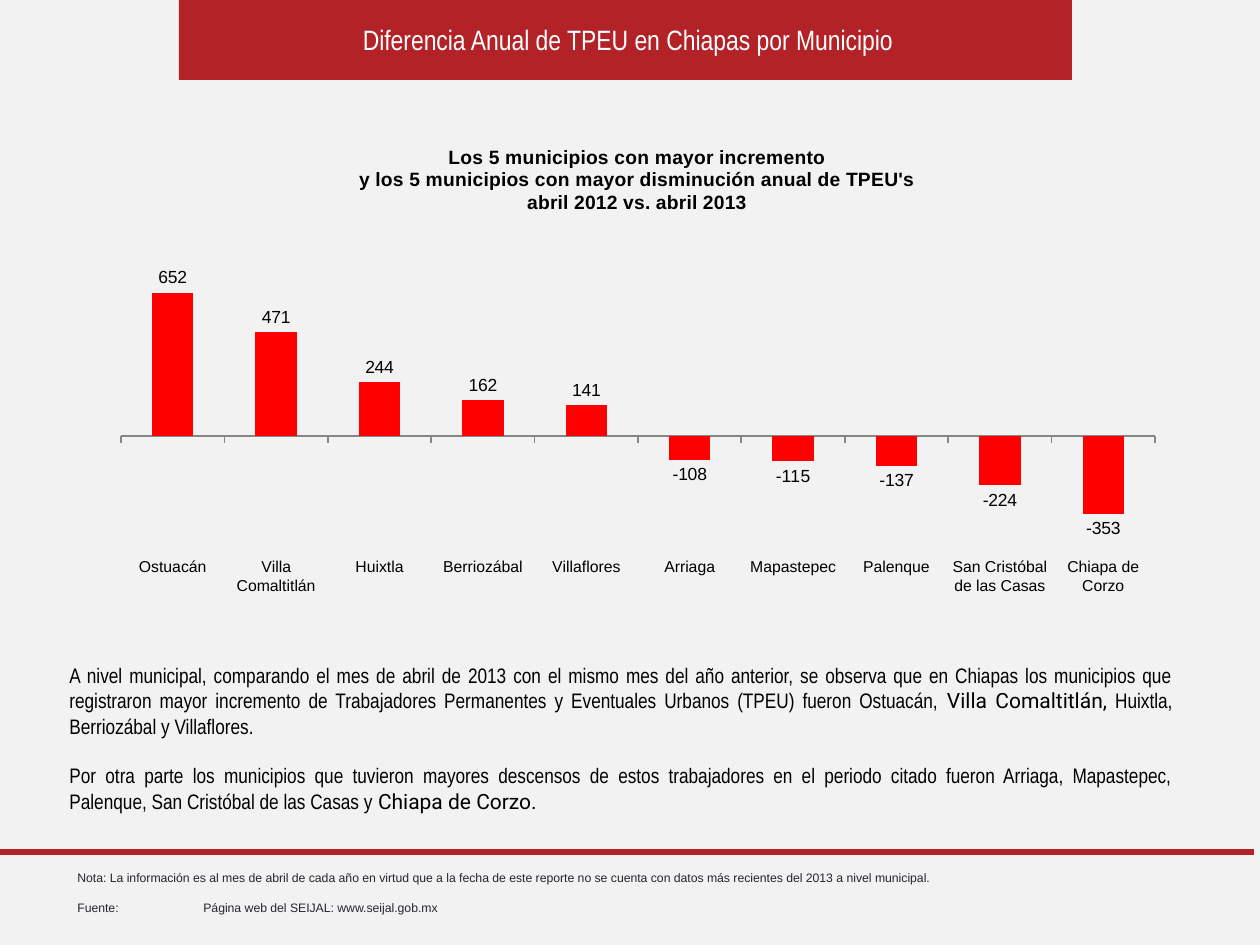
from lxml.etree import SubElement
from pptx import Presentation
from pptx.chart.data import CategoryChartData
from pptx.dml.color import RGBColor
from pptx.enum.chart import XL_CHART_TYPE, XL_LABEL_POSITION, XL_TICK_LABEL_POSITION, XL_TICK_MARK
from pptx.enum.shapes import MSO_SHAPE
from pptx.enum.text import MSO_ANCHOR, PP_ALIGN
from pptx.oxml.ns import qn
from pptx.util import Emu, Pt

PX_PER_INCH = 126
BACKGROUND = RGBColor(0xF2, 0xF2, 0xF2)
CRIMSON = RGBColor(0xB2, 0x22, 0x27)
RED = RGBColor(0xFF, 0x00, 0x00)
GRAY = RGBColor(0x86, 0x86, 0x86)
DARK = RGBColor(0x21, 0x27, 0x2E)
BLACK = RGBColor(0x00, 0x00, 0x00)
WHITE = RGBColor(0xFF, 0xFF, 0xFF)

TITLE = "Diferencia Anual de TPEU en Chiapas por Municipio"
CHART_TITLE = [
    "Los 5 municipios con mayor incremento",
    "y los 5 municipios con mayor disminución anual de TPEU's",
    "abril 2012 vs. abril 2013",
]
DIFFERENCES = {
    "Ostuacán": 652,
    "Villa Comaltitlán": 471,
    "Huixtla": 244,
    "Berriozábal": 162,
    "Villaflores": 141,
    "Arriaga": -108,
    "Mapastepec": -115,
    "Palenque": -137,
    "San Cristóbal de las Casas": -224,
    "Chiapa de Corzo": -353,
}
ANALYSIS = [
    [
        ("A nivel municipal, comparando el mes de abril de 2013 con el mismo mes del año "
         "anterior, se observa que en Chiapas los municipios que registraron mayor incremento "
         "de Trabajadores Permanentes y Eventuales Urbanos (TPEU) fueron Ostuacán, ",
         "Arial Narrow"),
        ("Villa Comaltitlán,", "Roboto"),
        (" Huixtla, Berriozábal y Villaflores.", "Arial Narrow"),
    ],
    [
        ("Por otra parte los municipios que tuvieron mayores descensos de estos trabajadores "
         "en el periodo citado fueron Arriaga, Mapastepec, Palenque, San Cristóbal de las "
         "Casas y", "Arial Narrow"),
        (" Chiapa de Corzo.", "Roboto"),
    ],
]
NOTES = [
    [("Nota: La información es al mes de abril de cada año en virtud que a la fecha de este "
      "reporte no se cuenta con datos más recientes del 2013 a nivel municipal.", "Arial")],
    [("Fuente:\tPágina web del SEIJAL: www.seijal.gob.mx", "Arial")],
]


def px(n):
    return Emu(round(n * 914400 / PX_PER_INCH))


def set_font(font, name, size, color, bold=False):
    font.name, font.size, font.bold = name, Pt(size), bold
    font.color.rgb = color


def add_bar(s, x, y, w, h):
    sp = s.shapes.add_shape(MSO_SHAPE.RECTANGLE, px(x), px(y), px(w), px(h))
    sp.shadow.inherit = False
    sp.fill.solid()
    sp.fill.fore_color.rgb = CRIMSON
    sp.line.fill.background()


def write_paragraphs(tf, paragraphs, size, color, align, gap=0):
    for i, runs in enumerate(paragraphs):
        p = tf.add_paragraph() if i else tf.paragraphs[0]
        p.alignment = align
        if i:
            p.space_before = Pt(gap)
        for text, font_name in runs:
            r = p.add_run()
            r.text = text
            set_font(r.font, font_name, size, color)


def add_header(s, x, y, w, h):
    add_bar(s, x, y, w, h)
    tf = s.shapes.add_textbox(px(x + 5), px(y + 16), px(w - 5), px(47)).text_frame
    tf.word_wrap = True
    write_paragraphs(tf, [[(TITLE, "Arial Narrow")]], 16, WHITE, PP_ALIGN.CENTER)


def set_layout(parent, index, **values):
    old = parent.find(qn("c:layout"))
    if old is not None:
        parent.remove(old)
    layout = SubElement(parent, qn("c:layout"))
    parent.insert(index, layout)
    manual = SubElement(layout, qn("c:manualLayout"))
    for tag, value in values.items():
        SubElement(manual, qn(f"c:{tag}")).set("val", str(value))


def add_difference_chart(s, x, y, w, h):
    data = CategoryChartData(number_format="#,##0")
    data.categories = list(DIFFERENCES)
    data.add_series("Series 1", list(DIFFERENCES.values()))
    chart = s.shapes.add_chart(
        XL_CHART_TYPE.COLUMN_CLUSTERED, px(x), px(y), px(w), px(h), data).chart
    set_font(chart.font, "Arial", 10, BLACK)
    chart.has_legend = False

    chart.has_title = True
    title = chart.chart_title
    title.include_in_layout = False
    tf = title.text_frame
    write_paragraphs(tf, [[(line, "Arial")] for line in CHART_TITLE],
                     11, BLACK, PP_ALIGN.CENTER)
    for p in tf.paragraphs:
        p.runs[0].font.bold = True
    set_layout(tf._txBody.getparent().getparent(), 1,
               xMode="edge", yMode="edge", x=0.24, y=0.04)
    set_layout(chart.plots[0]._element.getparent(), 0,
               layoutTarget="inner", xMode="edge", yMode="edge",
               x=0.024, y=0.194, w=0.953, h=0.667)

    axis = chart.category_axis
    axis.tick_label_position = XL_TICK_LABEL_POSITION.LOW
    axis.major_tick_mark = XL_TICK_MARK.OUTSIDE
    axis.format.line.color.rgb = GRAY
    axis.format.line.width = Pt(1)
    set_font(axis.tick_labels.font, "Arial", 9, BLACK)

    axis = chart.value_axis
    axis.minimum_scale, axis.maximum_scale = -500, 1000
    axis.has_major_gridlines = False
    axis.visible = False

    plot = chart.plots[0]
    plot.gap_width = 150
    plot.vary_by_categories = False
    series = plot.series[0]
    series.invert_if_negative = False
    series.format.fill.solid()
    series.format.fill.fore_color.rgb = RED
    labels = series.data_labels
    labels.show_value = True
    labels.number_format = "#,##0"
    labels.number_format_is_linked = False
    labels.position = XL_LABEL_POSITION.OUTSIDE_END
    set_font(labels.font, "Arial", 10, BLACK)


def add_analysis(s, x, y, w, h):
    sp = s.shapes.add_shape(MSO_SHAPE.ROUNDED_RECTANGLE, px(x), px(y), px(w), px(h))
    sp.adjustments[0] = 0
    sp.shadow.inherit = False
    sp.fill.background()
    sp.line.fill.background()
    tf = sp.text_frame
    tf.word_wrap = True
    tf.vertical_anchor = MSO_ANCHOR.MIDDLE
    write_paragraphs(tf, ANALYSIS, 12, BLACK, PP_ALIGN.JUSTIFY, gap=14)


def add_footer(s, x, y, w, h):
    add_bar(s, x, y, w, 6)
    tf = s.shapes.add_textbox(px(x + 65), px(y + 15), px(902), px(h - 15)).text_frame
    tf.word_wrap = False
    write_paragraphs(tf, NOTES, 7, DARK, PP_ALIGN.LEFT, gap=8.5)
    tabs = SubElement(tf.paragraphs[1]._p.get_or_add_pPr(), qn("a:tabLst"))
    SubElement(tabs, qn("a:tab"), pos=str(px(126)), algn="l")


def main():
    prs = Presentation()
    prs.slide_width, prs.slide_height = px(1260), px(945)
    s = prs.slides.add_slide(prs.slide_layouts[6])
    s.background.fill.solid()
    s.background.fill.fore_color.rgb = BACKGROUND
    add_header(s, 179, 0, 893, 80)
    add_difference_chart(s, 95, 120, 1085, 495)
    add_analysis(s, 57, 641, 1128, 194)
    add_footer(s, 0, 849, 1254, 72)
    prs.save("out.pptx")


if __name__ == "__main__":
    main()
